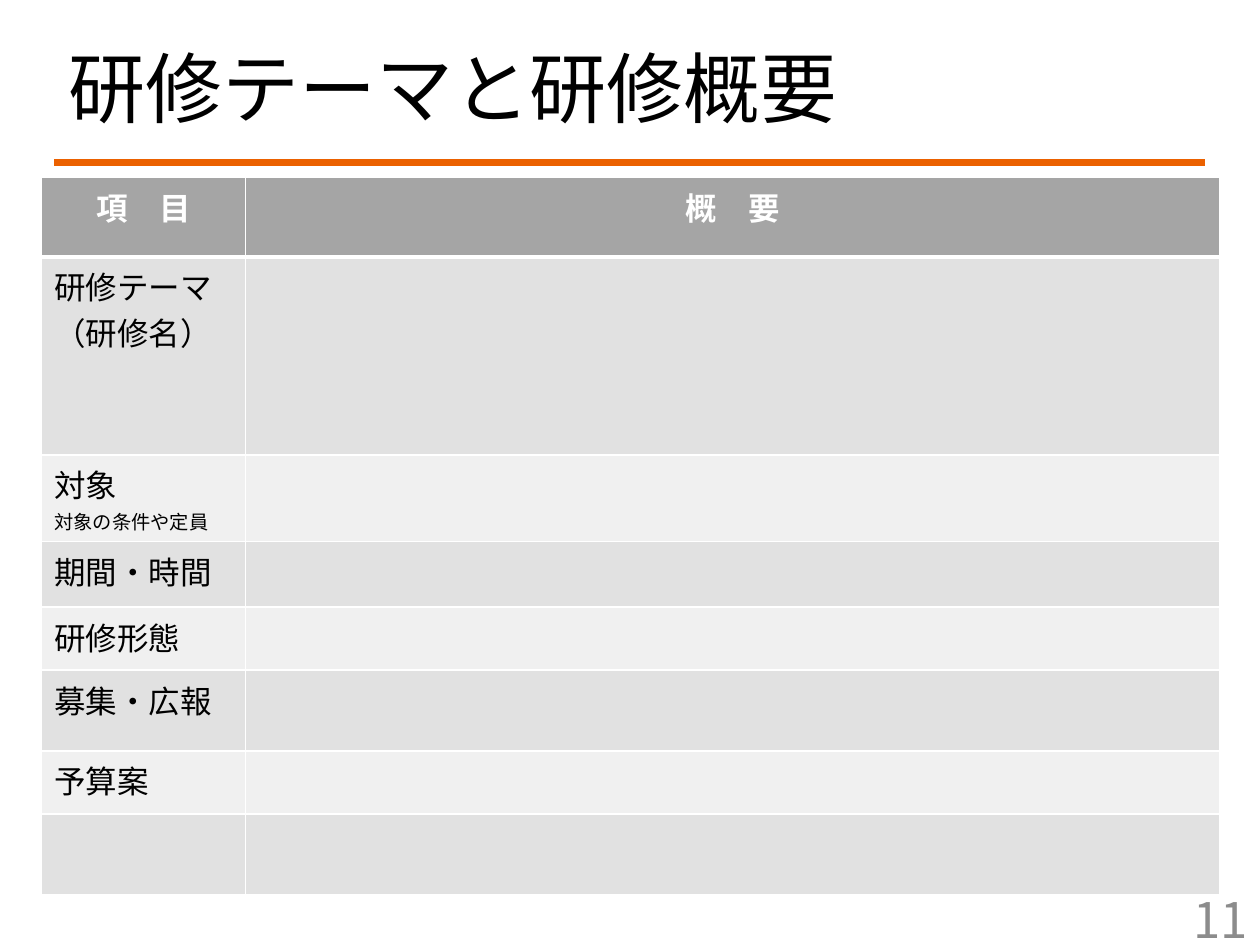
from lxml.etree import SubElement
from pptx import Presentation
from pptx.dml.color import RGBColor
from pptx.enum.shapes import MSO_CONNECTOR
from pptx.enum.text import MSO_ANCHOR, PP_ALIGN
from pptx.oxml.ns import qn
from pptx.util import Inches, Pt

FONT = "Noto Sans CJK JP"
BLACK = RGBColor(0x00, 0x00, 0x00)
WHITE = RGBColor(0xFF, 0xFF, 0xFF)
ORANGE = RGBColor(0xEB, 0x61, 0x00)
PAGE_GREY = RGBColor(0x8C, 0x8C, 0x8C)
HEADER_GREY = RGBColor(0xA5, 0xA5, 0xA5)
BANDS = [RGBColor(0xF0, 0xF0, 0xF0), RGBColor(0xE1, 0xE1, 0xE1)]

COLUMN_WIDTHS = [1.62, 7.73]
ROWS = [
    (0.63, ["項　目", "概　要"]),
    (1.57, ["研修テーマ\n（研修名）", ""]),
    (0.69, ["対象\n対象の条件や定員", ""]),
    (0.52, ["期間・時間", ""]),
    (0.5, ["研修形態", ""]),
    (0.64, ["募集・広報", ""]),
    (0.5, ["予算案", ""]),
    (0.64, ["", ""]),
]


def write(frame, text, size=18, color=BLACK, bold=False, align=PP_ALIGN.LEFT, spacing=None):
    frame.text = text
    for paragraph in frame.paragraphs:
        paragraph.alignment = align
        paragraph.line_spacing = spacing
        for run in paragraph.runs:
            run.font.size = Pt(size)
            run.font.name = FONT
            run.font.bold = bold
            run.font.color.rgb = color
            SubElement(run.font._element, qn("a:ea"), typeface=FONT)


def add_white_borders(cell, **widths):
    """Draw the cell's sides; keys are L, R, T, B and values are points."""
    properties = cell._tc.get_or_add_tcPr()
    for side, width in widths.items():
        border = SubElement(properties, qn(f"a:ln{side}"), w=str(Pt(width)))
        fill = SubElement(border, qn("a:solidFill"))
        SubElement(fill, qn("a:srgbClr"), val=str(WHITE))


prs = Presentation()
prs.slide_width = Inches(10)
prs.slide_height = Inches(7.5)
slide = prs.slides.add_slide(prs.slide_layouts[5])

# Title and the rule below it
title = slide.shapes.title
title.left, title.top = Inches(0.44), Inches(0.21)
title.width, title.height = Inches(9.11), Inches(1.05)
write(title.text_frame, "研修テーマと研修概要", size=44, spacing=0.9)
title.text_frame.vertical_anchor = MSO_ANCHOR.MIDDLE

title_rule = slide.shapes.add_connector(
    MSO_CONNECTOR.STRAIGHT, Inches(0.43), Inches(1.29), Inches(9.56), Inches(1.29))
title_rule.line.color.rgb = ORANGE
title_rule.line.width = Pt(4)
SubElement(title_rule._element.spPr, qn("a:effectLst"))

# Page number
page_number = slide.shapes.add_textbox(Inches(7.5), Inches(7.09), Inches(2.5), Inches(0.4))
page_number.text_frame.word_wrap = True
page_number.text_frame.vertical_anchor = MSO_ANCHOR.MIDDLE
write(page_number.text_frame, "11", size=28, color=PAGE_GREY, align=PP_ALIGN.RIGHT)

# Outline of the training
outline = slide.shapes.add_table(
    len(ROWS), len(COLUMN_WIDTHS), Inches(0.33), Inches(1.41),
    Inches(sum(COLUMN_WIDTHS)), Inches(sum(height for height, _ in ROWS))).table
for column, width in zip(outline.columns, COLUMN_WIDTHS):
    column.width = Inches(width)

for row_index, (height, texts) in enumerate(ROWS):
    outline.rows[row_index].height = Inches(height)
    is_header = row_index == 0
    for column_index, text in enumerate(texts):
        cell = outline.cell(row_index, column_index)
        add_white_borders(cell, L=1, R=1, T=3 if row_index == 1 else 1, B=3 if is_header else 1)
        cell.fill.solid()
        cell.fill.fore_color.rgb = HEADER_GREY if is_header else BANDS[row_index % 2]
        if is_header:
            write(cell.text_frame, text, color=WHITE, bold=True, align=PP_ALIGN.CENTER)
        elif text:
            write(cell.text_frame, text)

target_note = outline.cell(2, 0).text_frame.paragraphs[1]
target_note.runs[0].font.size = Pt(11)

prs.save("out.pptx")
